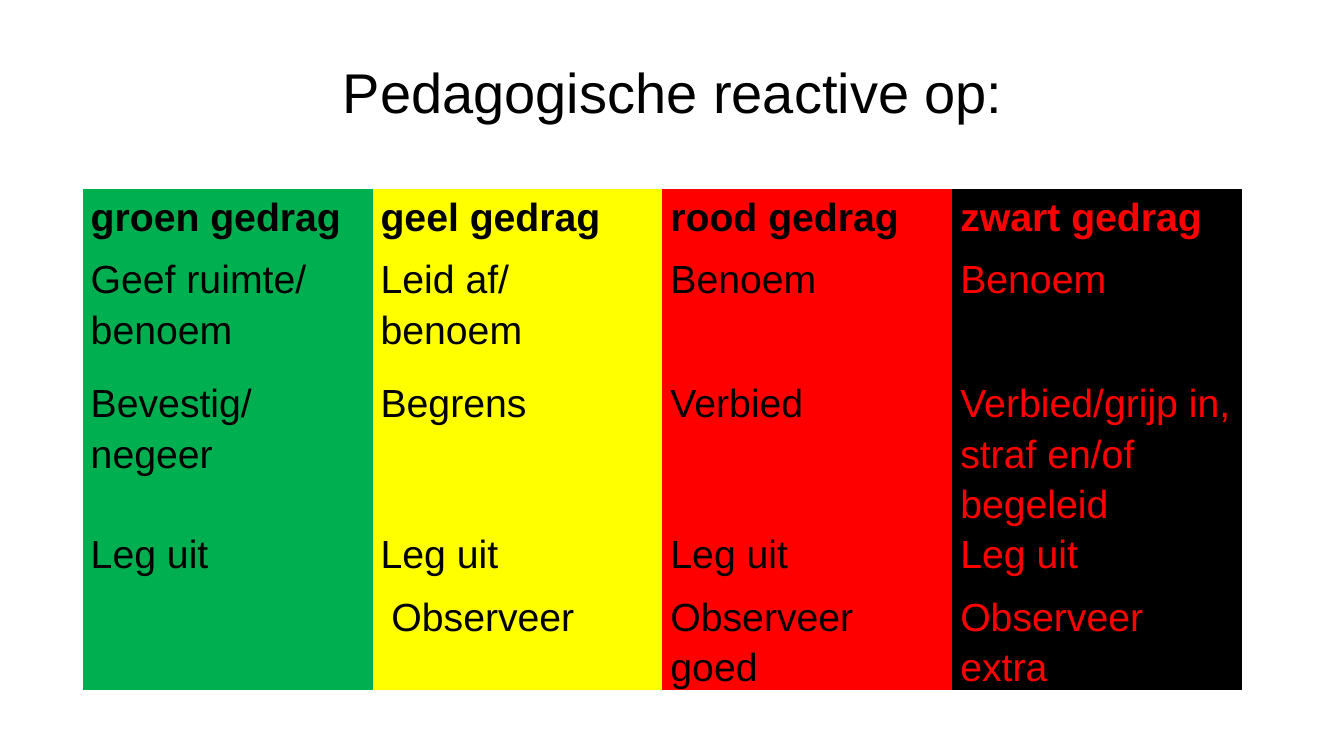
import dataclasses

import pptx
import pptx.dml.color
import pptx.enum.text
import pptx.oxml.ns
import pptx.util


@dataclasses.dataclass(frozen=True)
class Theme:
    font: str = "Arial"
    black: str = "000000"
    green: str = "00B050"
    yellow: str = "FFFF00"
    red: str = "FF0000"
    title: int = 40
    body: int = 28


@dataclasses.dataclass(frozen=True)
class Column:
    fill: str
    ink: str
    texts: tuple[str, ...]


THEME = Theme()
NO_GRID = "{2D5ABB26-0587-4C30-8999-92F81FD0307C}"
ROWS = (0.62, 1.23, 0.62, 0.62, 0.62)
WIDTH = 11.5
COLUMNS = (
    Column(THEME.green, THEME.black,
           ("groen gedrag", "Geef ruimte/ benoem", "Bevestig/ negeer", "Leg uit", "")),
    Column(THEME.yellow, THEME.black,
           ("geel gedrag", "Leid af/ benoem", "Begrens", "Leg uit", " Observeer")),
    Column(THEME.red, THEME.black,
           ("rood gedrag", "Benoem", "Verbied", "Leg uit", "Observeer goed")),
    Column(THEME.black, THEME.red,
           ("zwart gedrag", "Benoem", "Verbied/grijp in, straf en/of begeleid",
            "Leg uit", "Observeer extra")),
)


def paint(code: str) -> pptx.dml.color.RGBColor:
    return pptx.dml.color.RGBColor.from_string(code)


def write(frame: pptx.text.text.TextFrame, text: str, size: int, ink: str,
          gap: float, bold: bool = False) -> None:
    line = frame.paragraphs[0]
    line.line_spacing = gap
    run = line.add_run()
    run.text = text
    run.font.name = THEME.font
    run.font.size = pptx.util.Pt(size)
    run.font.bold = bold
    run.font.color.rgb = paint(ink)


def add_title(slide: pptx.slide.Slide) -> None:
    title = slide.shapes.title
    title.left, title.top, title.width, title.height = map(
        pptx.util.Inches, (0.92, 0.2, WIDTH, 1.5))
    frame = title.text_frame
    frame.auto_size = pptx.enum.text.MSO_AUTO_SIZE.NONE
    frame.vertical_anchor = pptx.enum.text.MSO_ANCHOR.MIDDLE
    write(frame, "Pedagogische reactive op:", THEME.title, THEME.black, 0.9)
    frame.paragraphs[0].alignment = pptx.enum.text.PP_ALIGN.CENTER


def fill_cell(cell: pptx.table._Cell, text: str, column: Column, head: bool) -> None:
    cell.fill.solid()
    cell.fill.fore_color.rgb = paint(column.fill)
    cell.margin_left = cell.margin_right = pptx.util.Inches(0.08)
    cell.margin_top = cell.margin_bottom = 0
    if text:
        write(cell.text_frame, text, THEME.body, column.ink, 1.15, head)


def add_grid(slide: pptx.slide.Slide) -> None:
    box = map(pptx.util.Inches, (0.82, 1.88, WIDTH, sum(ROWS)))
    table = slide.shapes.add_table(len(ROWS), len(COLUMNS), *box).table
    table.horz_banding = False
    style = table._tbl.tblPr.find(pptx.oxml.ns.qn("a:tableStyleId"))
    style.text = NO_GRID
    for row, height in zip(table.rows, ROWS):
        row.height = pptx.util.Inches(height)
    for x, column in enumerate(COLUMNS):
        table.columns[x].width = pptx.util.Inches(WIDTH / len(COLUMNS))
        for y, text in enumerate(column.texts):
            fill_cell(table.cell(y, x), text, column, y == 0)


def main() -> None:
    deck = pptx.Presentation()
    deck.slide_width = pptx.util.Inches(13.33)
    deck.slide_height = pptx.util.Inches(7.5)
    slide = deck.slides.add_slide(deck.slide_layouts[5])
    add_title(slide)
    add_grid(slide)
    deck.save("out.pptx")


if __name__ == "__main__":
    main()
